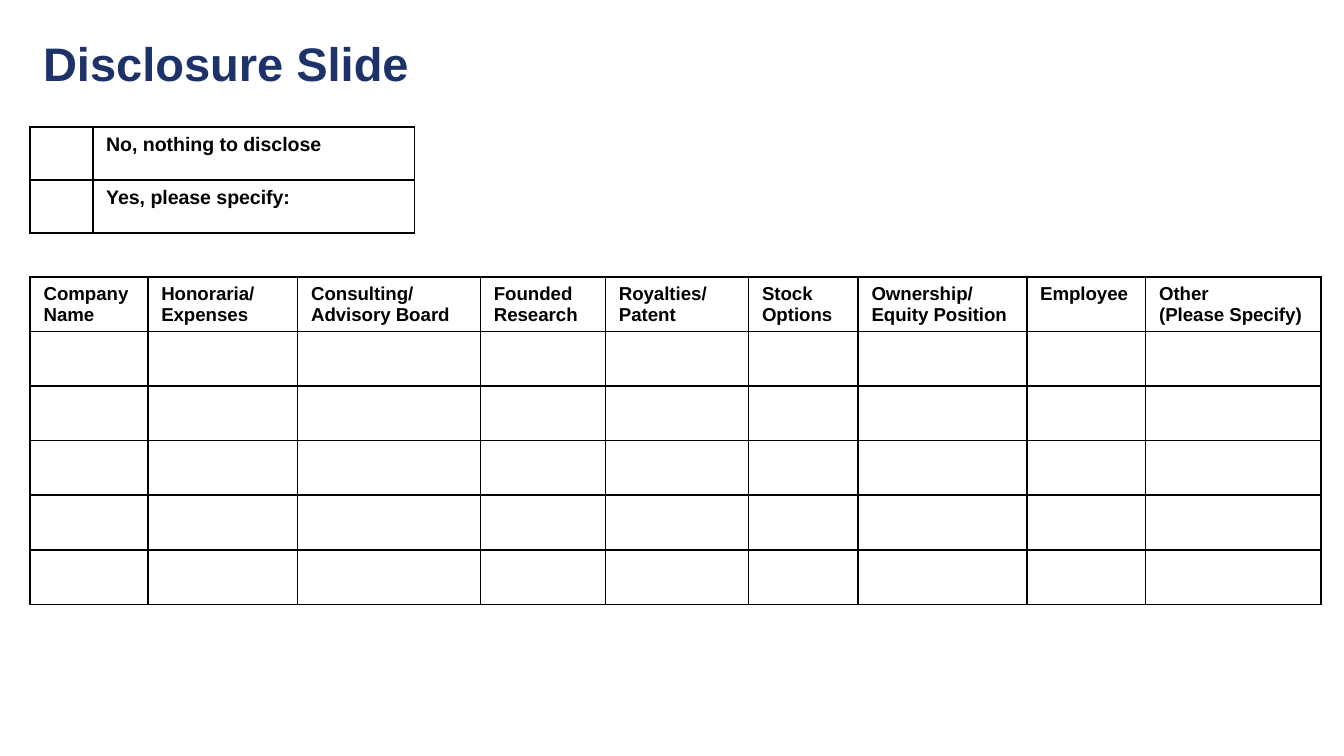
from dataclasses import dataclass

from lxml.etree import SubElement
from pptx import Presentation
from pptx.dml.color import RGBColor
from pptx.enum.text import MSO_ANCHOR, MSO_AUTO_SIZE, PP_ALIGN
from pptx.oxml.ns import qn
from pptx.util import Pt

PX = 4572  # 200 px to the inch


@dataclass(frozen=True)
class Theme:
    font: str = "Arial"
    heading: str = "1C3269"
    ink: str = "000000"
    paper: str = "FFFFFF"
    heading_size: float = 25.2
    choice_size: float = 10.5
    grid_size: float = 10
    border: float = 1


THEME = Theme()

CHOICES = [["", "No, nothing to disclose"], ["", "Yes, please specify:"]]
CHOICE_WIDTHS = [93, 479]

INTERESTS = {
    "Company Name": 175,
    "Honoraria/ Expenses": 223,
    "Consulting/ Advisory Board": 272,
    "Founded Research": 186,
    "Royalties/ Patent": 213,
    "Stock Options": 163,
    "Ownership/ Equity Position": 251,
    "Employee": 177,
    "Other\n(Please Specify)": 261,
}
BLANK_ROWS = 5


def style_font(paragraph, size, color):
    font = paragraph.font
    font.name, font.size, font.bold = THEME.font, Pt(size), True
    font.color.rgb = RGBColor.from_string(color)


def add_borders(cell):
    properties = cell._tc.get_or_add_tcPr()
    for side in ("lnL", "lnR", "lnT", "lnB"):
        line = SubElement(properties, qn(f"a:{side}"), w=str(Pt(THEME.border)))
        fill = SubElement(line, qn("a:solidFill"))
        SubElement(fill, qn("a:srgbClr"), val=THEME.ink)


def add_title(slide, left, top, width, height):
    title = slide.shapes.title
    title.left, title.top = left * PX, top * PX
    title.width, title.height = width * PX, height * PX
    frame = title.text_frame
    frame.text = "Disclosure Slide"
    frame.auto_size = MSO_AUTO_SIZE.NONE
    frame.vertical_anchor = MSO_ANCHOR.TOP
    frame.margin_left = frame.margin_right = 20 * PX
    frame.margin_top = frame.margin_bottom = 20 * PX
    paragraph = frame.paragraphs[0]
    paragraph.alignment = PP_ALIGN.LEFT
    style_font(paragraph, THEME.heading_size, THEME.heading)


def add_form_table(slide, left, top, height, widths, rows, size):
    """Draw a white, ruled table; its rows share the height equally."""
    table = slide.shapes.add_table(
        len(rows), len(widths), left * PX, top * PX, sum(widths) * PX, height * PX
    ).table
    table.first_row = table.horz_banding = False
    for column, width in zip(table.columns, widths):
        column.width = width * PX
    for row, texts in zip(table.rows, rows):
        row.height = height * PX // len(rows)
        for cell, text in zip(row.cells, texts):
            add_borders(cell)
            cell.fill.solid()
            cell.fill.fore_color.rgb = RGBColor.from_string(THEME.paper)
            cell.margin_left = cell.margin_right = 20 * PX
            cell.margin_top, cell.margin_bottom = 10 * PX, 6 * PX
            cell.text = text
            for paragraph in cell.text_frame.paragraphs:
                style_font(paragraph, size, THEME.ink)


def build_disclosure_slide(presentation):
    slide = presentation.slides.add_slide(presentation.slide_layouts[5])
    add_title(slide, 44, 32, 1716, 158)
    add_form_table(slide, 45, 189, 158, CHOICE_WIDTHS, CHOICES, THEME.choice_size)
    blank_row = [""] * len(INTERESTS)
    interest_rows = [list(INTERESTS)] + [blank_row] * BLANK_ROWS
    add_form_table(
        slide, 45, 412, 488, list(INTERESTS.values()), interest_rows, THEME.grid_size
    )


def main():
    presentation = Presentation()
    presentation.slide_width, presentation.slide_height = 2000 * PX, 1125 * PX
    build_disclosure_slide(presentation)
    presentation.save("out.pptx")


if __name__ == "__main__":
    main()
